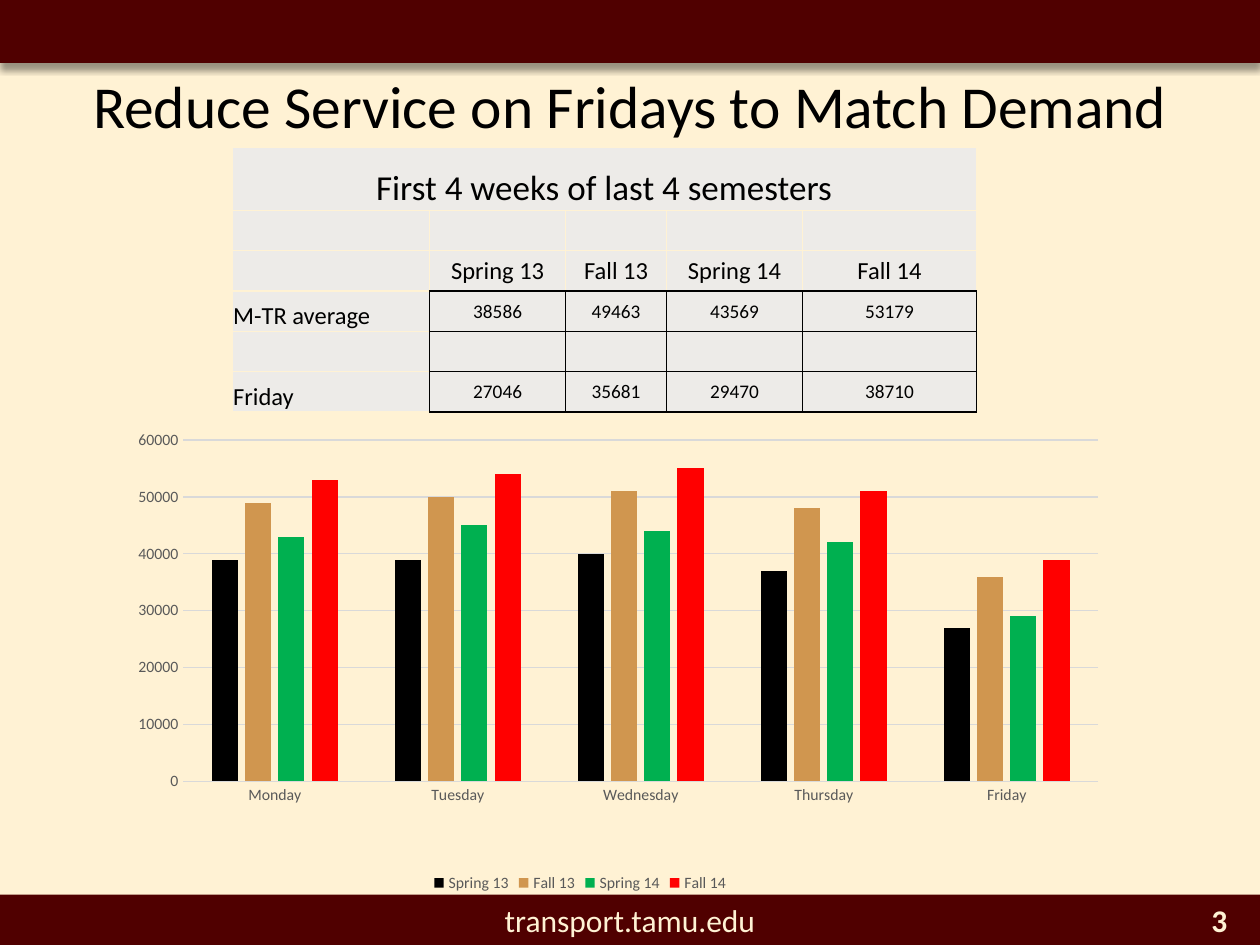
from lxml.etree import SubElement
from pptx import Presentation
from pptx.chart.data import CategoryChartData
from pptx.dml.color import RGBColor
from pptx.enum.chart import XL_CHART_TYPE as ChartType, XL_LEGEND_POSITION as LegendPos
from pptx.enum.chart import XL_TICK_MARK as Tick
from pptx.enum.shapes import MSO_SHAPE as Shape
from pptx.enum.text import MSO_ANCHOR as Anchor, MSO_AUTO_SIZE as AutoSize, PP_ALIGN as Align
from pptx.oxml import parse_xml
from pptx.oxml.ns import nsdecls, qn
from pptx.util import Inches, Pt

FONT = "Calibri"
COLORS = {"cream": "FFF2D4", "maroon": "500000", "black": "000000", "cell": "EDEBE8",
          "label": "595959", "grid": "D9D9D9", "tan": "D0964F", "green": "00B050", "red": "FF0000"}
COLS, ROWS = 100, 75
SEMESTERS = ["Spring 13", "Fall 13", "Spring 14", "Fall 14"]
DAYS = ["Monday", "Tuesday", "Wednesday", "Thursday", "Friday"]
RIDERS = [(39000, 39000, 40000, 37000, 27000), (49000, 50000, 51000, 48000, 36000),
          (43000, 45000, 44000, 42000, 29000), (53000, 54000, 55000, 51000, 39000)]
SERIES_COLORS = ["black", "tan", "green", "red"]
TABLE_ROWS = [["First 4 weeks of last 4 semesters", "", "", "", ""],
              [""] * 5,
              ["", *SEMESTERS],
              ["M-TR average", "38586", "49463", "43569", "53179"],
              [""] * 5,
              ["Friday", "27046", "35681", "29470", "38710"]]
COL_WIDTHS = [15.7, 10.8, 8, 10.8, 13.8]
ROW_HEIGHTS = [5] + [3.2] * 5
FIRST_DATA_ROW = 3


def rgb(name):
    """Return the named colour."""
    return RGBColor.from_string(COLORS[name])


def units(*cells):
    """Turn grid cells, a hundred across the slide, into lengths."""
    return [Inches(n * 10 / COLS) for n in cells]


def style_font(font, size, color, bold=False):
    """Set face, size, colour and weight."""
    font.name, font.size, font.bold = FONT, Pt(size), bold
    font.color.rgb = rgb(color)


def write(tf, text, size, color, align, bold=False):
    """Write one run into the first paragraph."""
    p = tf.paragraphs[0]
    p.alignment = align
    r = p.add_run()
    r.text = text
    style_font(r.font, size, color, bold)


def add_bar(slide, top, height):
    """Add a maroon band across the slide."""
    sp = slide.shapes.add_shape(Shape.RECTANGLE, *units(0, top, COLS, height))
    sp.shadow.inherit = False
    sp.fill.solid()
    sp.fill.fore_color.rgb = rgb("maroon")
    sp.line.fill.background()
    sp.text_frame.vertical_anchor = Anchor.MIDDLE
    return sp


def cast_shadow(sp):
    """Give a shape a soft shadow straight below it."""
    effects = sp._element.spPr.find(qn("a:effectLst"))
    effects.append(parse_xml(
        f'<a:outerShdw {nsdecls("a")} blurRad="{Pt(4)}" dist="{Pt(3)}" dir="5400000" '
        f'rotWithShape="0"><a:srgbClr val="{COLORS["black"]}"><a:alpha val="40000"/>'
        '</a:srgbClr></a:outerShdw>'))


def add_title(slide, text):
    """Place and fill the title placeholder."""
    title = slide.shapes.title
    title.left, title.top, title.width, title.height = units(5, 5.8, 90, 5)
    tf = title.text_frame
    tf.auto_size, tf.vertical_anchor = AutoSize.NONE, Anchor.MIDDLE
    write(tf, text, 34, "black", Align.CENTER)


def add_page_number(slide, text):
    """Add the page number at the right of the lower band."""
    tf = slide.shapes.add_textbox(*units(89.6, 71, 8.8, 4)).text_frame
    tf.word_wrap = True
    write(tf, text, 18, "cream", Align.RIGHT, bold=True)


def is_data(row, col):
    """Tell whether a table cell lies in the ruled figures."""
    return FIRST_DATA_ROW <= row < len(TABLE_ROWS) and 1 <= col < len(COL_WIDTHS)


def add_borders(cell, row, col):
    """Rule each side black where it touches the figures, else cream."""
    tc_pr = cell._tc.get_or_add_tcPr()
    sides = {"lnL": (0, -1), "lnR": (0, 1), "lnT": (-1, 0), "lnB": (1, 0)}
    for tag, (down, across) in sides.items():
        dark = is_data(row, col) or is_data(row + down, col + across) and row > 0
        ln = SubElement(tc_pr, qn(f"a:{tag}"), w=str(Pt(1)))
        fill = SubElement(ln, qn("a:solidFill"))
        SubElement(fill, qn("a:srgbClr"), val=COLORS["black" if dark else "cream"])


def fill_cell(cell, row, col, text):
    """Format one table cell and write its text."""
    add_borders(cell, row, col)
    cell.fill.solid()
    cell.fill.fore_color.rgb = rgb("cell")
    cell.margin_left = cell.margin_right = cell.margin_top = Inches(0.01)
    cell.margin_bottom = 0
    cell.vertical_anchor = Anchor.BOTTOM if col == 0 else Anchor.MIDDLE
    if text:
        size = 20 if row == 0 else 11 if is_data(row, col) else 14
        align = Align.LEFT if col == 0 and row > 0 else Align.CENTER
        write(cell.text_frame, text, size, "black", align)


def add_ridership_table(slide):
    """Add the table of averages by semester."""
    box = units(18.4, 11.7, sum(COL_WIDTHS), sum(ROW_HEIGHTS))
    table = slide.shapes.add_table(len(ROW_HEIGHTS), len(COL_WIDTHS), *box).table
    table.first_row = table.horz_banding = False
    for column, width in zip(table.columns, units(*COL_WIDTHS)):
        column.width = width
    for line, height in zip(table.rows, units(*ROW_HEIGHTS)):
        line.height = height
    table.cell(0, 0).merge(table.cell(0, len(COL_WIDTHS) - 1))
    for row, texts in enumerate(TABLE_ROWS):
        for col, text in enumerate(texts):
            fill_cell(table.cell(row, col), row, col, text)


def set_plot_area(chart, **shares):
    """Fix the inner plot area as shares of the chart."""
    area = chart._chartSpace.chart.plotArea
    for old in area.findall(qn("c:layout")):
        area.remove(old)
    modes = '<c:layoutTarget val="inner"/><c:xMode val="edge"/><c:yMode val="edge"/>'
    sizes = "".join(f'<c:{key} val="{value}"/>' for key, value in shares.items())
    area.insert(0, parse_xml(f'<c:layout {nsdecls("c")}><c:manualLayout>{modes}{sizes}'
                             '</c:manualLayout></c:layout>'))


def style_line(line):
    """Make an axis or grid line thin and grey."""
    line.color.rgb, line.width = rgb("grid"), Pt(0.75)


def add_ridership_chart(slide):
    """Add the clustered columns of riders by weekday."""
    data = CategoryChartData()
    data.categories = DAYS
    for name, values in zip(SEMESTERS, RIDERS):
        data.add_series(name, values)
    chart = slide.shapes.add_chart(ChartType.COLUMN_CLUSTERED, *units(2.3, 27.5, 87.5, 43.7),
                                   data).chart
    chart.has_title = False
    style_font(chart.font, 10, "black")
    plot = chart.plots[0]
    plot.gap_width, plot.overlap, plot.vary_by_categories = 219, -27, False
    for series, color in zip(plot.series, SERIES_COLORS):
        series.format.fill.solid()
        series.format.fill.fore_color.rgb = rgb(color)
    for axis in (chart.category_axis, chart.value_axis):
        axis.major_tick_mark = axis.minor_tick_mark = Tick.NONE
        style_font(axis.tick_labels.font, 9, "label")
    style_line(chart.category_axis.format.line)
    value_axis = chart.value_axis
    value_axis.minimum_scale, value_axis.maximum_scale, value_axis.major_unit = 0, 60000, 10000
    value_axis.format.line.fill.background()
    style_line(value_axis.major_gridlines.format.line)
    chart.has_legend = True
    chart.legend.position, chart.legend.include_in_layout = LegendPos.BOTTOM, False
    style_font(chart.legend.font, 9, "label")
    set_plot_area(chart, x=0.14, y=0.17, w=0.83, h=0.62)


def main():
    """Build the slide and save it."""
    prs = Presentation()
    prs.slide_width, prs.slide_height = units(COLS, ROWS)
    slide = prs.slides.add_slide(prs.slide_layouts[5])
    slide.background.fill.solid()
    slide.background.fill.fore_color.rgb = rgb("cream")
    cast_shadow(add_bar(slide, 0, 5))
    footer = add_bar(slide, 71, 4)
    write(footer.text_frame, "transport.tamu.edu", 18, "cream", Align.CENTER)
    add_title(slide, "Reduce Service on Fridays to Match Demand")
    add_page_number(slide, "3")
    add_ridership_chart(slide)
    add_ridership_table(slide)
    prs.save("out.pptx")


if __name__ == "__main__":
    main()
